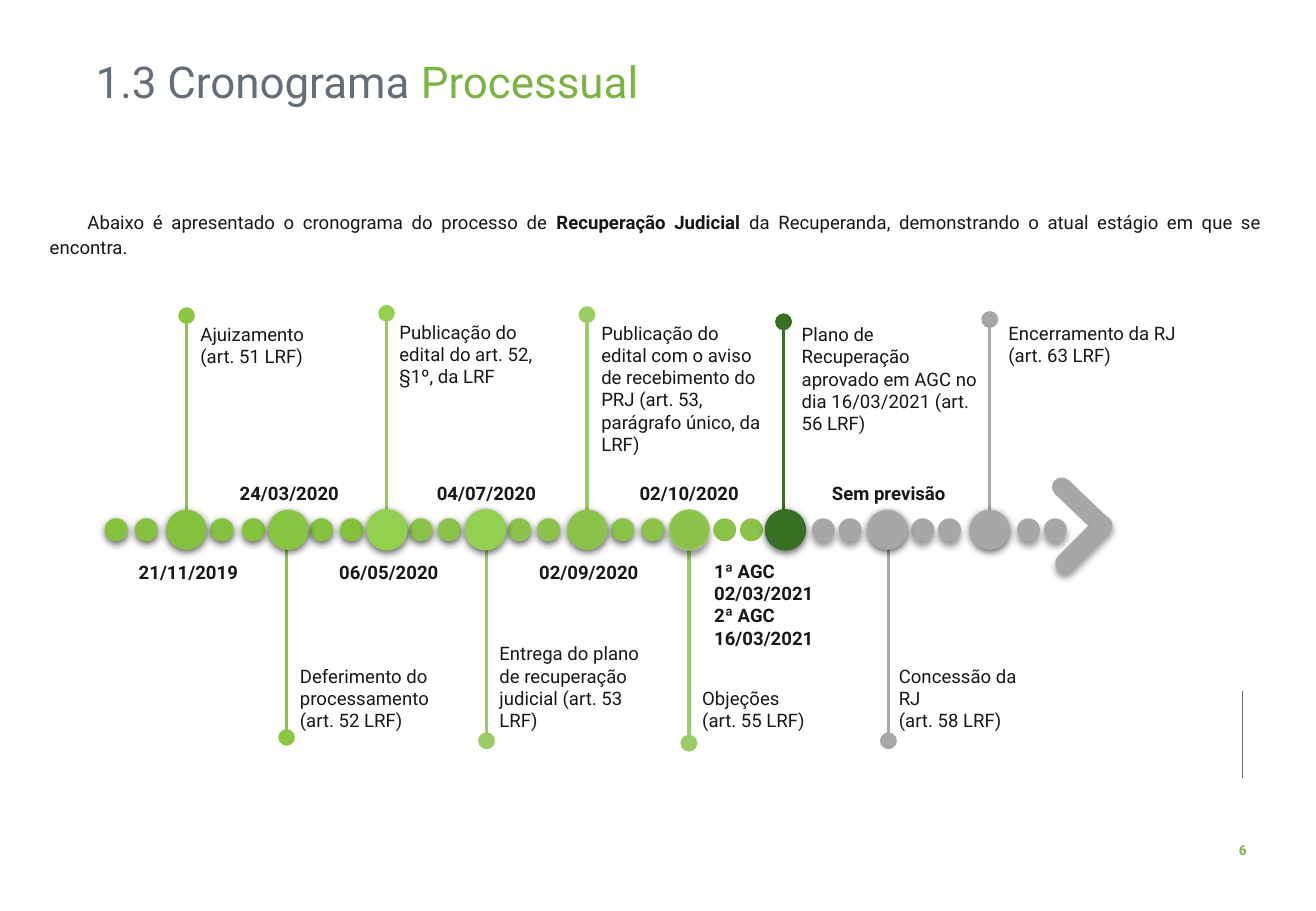
from lxml.etree import SubElement
from pptx import Presentation
from pptx.dml.color import RGBColor
from pptx.enum.shapes import MSO_CONNECTOR as Connector, MSO_SHAPE as Shape
from pptx.enum.text import MSO_ANCHOR as Anchor, PP_ALIGN as Align
from pptx.oxml.ns import qn
from pptx.util import Cm, Pt

INK, SLATE, GREEN = "181717", "656D78", "7CB342"
LEAF, FRESH, BRIGHT, PALE, MOSS = "84C23D", "8AC843", "92D050", "9CCC65", "8BC34A"
FOREST, GREY = "377023", "A7A7A7"
TIGHT, SOFT = (63, 4.5, 1.5), (40, 4, 3)
AXIS = 11.08


def color(value):
    return RGBColor.from_string(value)


class Timeline:
    font = "Roboto"
    size = 11

    def __init__(self, slide):
        self.shapes = slide.shapes

    def text(self, left, top, width, height, paragraphs, size=size, fill=INK, bold=False,
             align=Align.LEFT, anchor=Anchor.TOP, wrap=True, spacing=None, indent=None):
        frame = self.shapes.add_textbox(Cm(left), Cm(top), Cm(width), Cm(height)).text_frame
        frame.word_wrap = wrap
        frame.vertical_anchor = anchor
        for index, parts in enumerate(paragraphs):
            paragraph = frame.add_paragraph() if index else frame.paragraphs[0]
            paragraph.alignment = align
            if spacing:
                paragraph.line_spacing = spacing
            if indent:
                paragraph._p.get_or_add_pPr().set("indent", str(Cm(indent)))
            for part in [parts] if isinstance(parts, str) else parts:
                words, run_fill, run_bold = (part, fill, bold) if isinstance(part, str) else part
                run = paragraph.add_run()
                run.text = words
                run.font.name = self.font
                run.font.size = Pt(size)
                run.font.bold = run_bold
                run.font.color.rgb = color(run_fill)

    def line(self, x, start, end, stroke, weight, dot=False):
        connector = self.shapes.add_connector(Connector.STRAIGHT, Cm(x), Cm(start), Cm(x), Cm(end))
        connector.line.color.rgb = color(stroke)
        connector.line.width = Pt(weight)
        properties = connector._element.spPr
        if dot:
            SubElement(properties.find(qn("a:ln")), qn("a:tailEnd"), type="oval", w="lg", len="lg")
        SubElement(properties, qn("a:effectLst"))

    def solid(self, kind, center_x, center_y, width, height, fill, shadow=None, outline=None, angle=0):
        shape = self.shapes.add_shape(kind, Cm(center_x - width / 2), Cm(center_y - height / 2),
                                      Cm(width), Cm(height))
        shape.fill.solid()
        shape.fill.fore_color.rgb = color(fill)
        shape.rotation = angle
        if outline:
            shape.line.color.rgb = color(outline)
            shape.line.width = Pt(0.75)
        else:
            shape.line.fill.background()
        shape.shadow.inherit = False
        if shadow:
            opacity, blur, distance = shadow
            effects = shape._element.spPr.find(qn("a:effectLst"))
            outer = SubElement(effects, qn("a:outerShdw"), blurRad=str(Pt(blur)),
                               dist=str(Pt(distance)), dir="5400000", algn="t", rotWithShape="0")
            shade = SubElement(outer, qn("a:srgbClr"), val="000000")
            SubElement(shade, qn("a:alpha"), val=str(opacity * 1000))
        return shape

    def circle(self, x, diameter, fill, shadow=None, outline=None):
        self.solid(Shape.OVAL, x, AXIS, diameter, diameter, fill, shadow, outline)


UPPER_STEPS = [
    (3.9, 6.6, FRESH, 1.5, 3.94, 6.63, 2.82, ["Ajuizamento (art. 51 LRF)"]),
    (8.08, 6.55, BRIGHT, 1.5, 8.1, 6.58, 3.3, ["Publicação do edital do art. 52, §1º, da LRF"]),
    (12.27, 6.58, PALE, 2, 12.32, 6.6, 3.96,
     ["Publicação do edital com o aviso de recebimento do PRJ (art. 53, parágrafo único, da LRF)"]),
    (16.38, 6.73, FOREST, 2, 16.51, 6.63, 4.19,
     ["Plano de Recuperação aprovado em AGC no dia 16/03/2021 (art. 56 LRF)"]),
    (20.69, 6.68, GREY, 2, 20.83, 6.6, 4.01, ["Encerramento da RJ", "(art. 63 LRF)"]),
]
LOWER_STEPS = [
    (5.99, 15.42, FRESH, 1.5, 6.02, 3.48, ["Deferimento do processamento (art. 52 LRF)"]),
    (10.17, 15.49, PALE, 2, 10.19, 3.56, ["Entrega do plano de recuperação judicial (art. 53 LRF)"]),
    (14.4, 15.54, PALE, 2, 14.43, 2.79, ["Objeções", "(art. 55 LRF)"]),
    (18.57, 15.49, GREY, 2, 18.54, 3.38, ["Concessão da RJ", "(art. 58 LRF)"]),
]
DATES = [
    (9.96, [(6.05, "24/03/2020"), (10.17, "04/07/2020"), (14.41, "02/10/2020"), (18.58, "Sem previsão")]),
    (11.61, [(3.94, "21/11/2019"), (8.13, "06/05/2020"), (12.31, "02/09/2020")]),
]
SMALL_DOTS = [
    (LEAF, TIGHT, [2.43, 3.06, 4.64, 5.3, 6.72, 7.35]),
    (MOSS, TIGHT, [8.8, 9.39, 10.86, 11.47, 13.02, 13.65]),
    (MOSS, None, [15.15, 15.71]),
    (GREY, SOFT, [17.21, 17.77, 19.29, 19.85, 21.5, 22.06]),
]
MILESTONES = [
    (3.9, LEAF, TIGHT, None), (6.03, "88C641", TIGHT, None), (8.09, BRIGHT, TIGHT, BRIGHT),
    (10.15, BRIGHT, TIGHT, BRIGHT), (12.28, MOSS, TIGHT, None), (14.41, MOSS, SOFT, PALE),
    (16.42, FOREST, TIGHT, FOREST), (18.55, GREY, TIGHT, None), (20.69, GREY, TIGHT, None),
]


def main():
    deck = Presentation()
    deck.slide_width, deck.slide_height = Cm(27.51), Cm(19.05)
    timeline = Timeline(deck.slides.add_slide(deck.slide_layouts[6]))

    timeline.line(25.98, 14.45, 16.26, SLATE, 0.5)
    timeline.text(25.55, 17.48, 0.86, 0.61, ["6"], size=8.1, fill=GREEN, bold=True,
                  align=Align.CENTER, wrap=False)
    timeline.text(1.75, 1.14, 20.78, 1.35,
                  [[("1.3 Cronograma ", SLATE, False), ("Processual", GREEN, False)]],
                  size=26, spacing=0.9)
    timeline.text(0.79, 4.22, 25.83, 0.76, [[
        "Abaixo é apresentado o cronograma do processo de ",
        ("Recuperação Judicial ", INK, True),
        "da Recuperanda, demonstrando o atual estágio em que se encontra.",
    ]], align=Align.JUSTIFY, spacing=1.14, indent=0.79)

    for x, tip, stroke, weight, left, top, width, label in UPPER_STEPS:
        timeline.line(x, 10.7, tip, stroke, weight, dot=True)
        timeline.text(left, top, width, 1.2, label)
    for x, tip, stroke, weight, left, width, label in LOWER_STEPS:
        timeline.line(x, 11.4, tip, stroke, weight, dot=True)
        timeline.text(left, 13.74, width, 1.68, label, anchor=Anchor.BOTTOM)

    for top, dates in DATES:
        for center, date in dates:
            timeline.text(center - 1.5, top, 3, 0.74, [date], bold=True, align=Align.CENTER)
    timeline.text(14.68, 11.58, 3.48, 1.2, ["1ª AGC 02/03/2021", "2ª AGC 16/03/2021"], bold=True)

    for fill, shadow, centers in SMALL_DOTS:
        for x in centers:
            timeline.circle(x, 0.48, fill, shadow)
    for center_x, center_y, angle, shadow in [(22.6, 10.57, 43.7, None), (22.66, 11.38, 315, SOFT)]:
        arm = timeline.solid(Shape.ROUNDED_RECTANGLE, center_x, center_y, 1.52, 0.41, GREY,
                             shadow, angle=angle)
        arm.adjustments[0] = 0.5
    for x, fill, shadow, outline in MILESTONES:
        timeline.circle(x, 0.84, fill, shadow, outline)

    deck.save("out.pptx")


if __name__ == "__main__":
    main()
